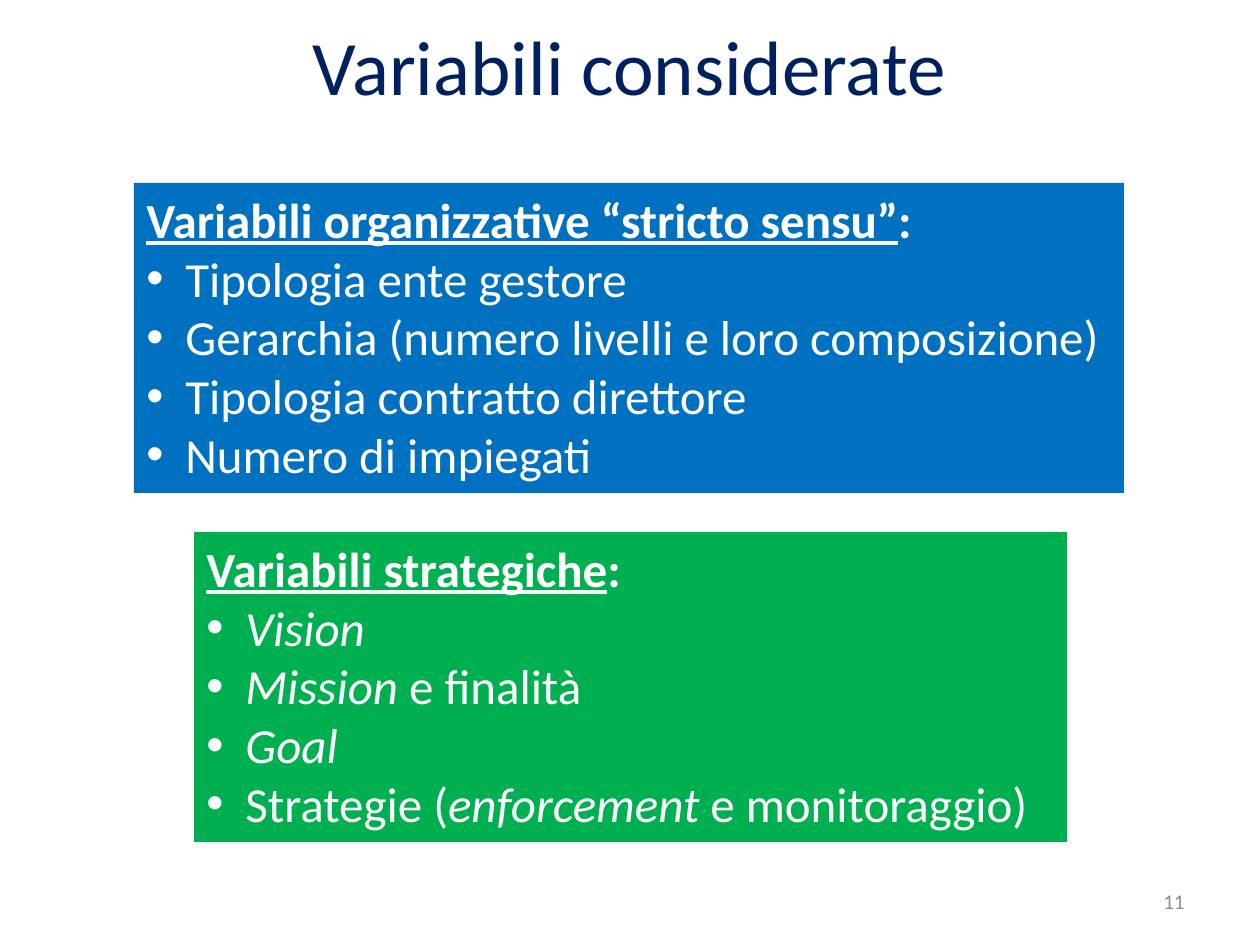
from lxml import etree
from pptx import Presentation, util as u
from pptx.dml.color import RGBColor
from pptx.enum import text
from pptx.oxml.ns import qn

NAVY = RGBColor(0x00, 0x20, 0x60)
BLUE = RGBColor(0x00, 0x70, 0xC0)
GREEN = RGBColor(0x00, 0xB0, 0x50)
WHITE = RGBColor(0xFF, 0xFF, 0xFF)
GREY = RGBColor(0x8C, 0x8C, 0x8C)
PX = u.Inches(1) / 126


def px(length):
    return u.Emu(round(length * PX))


class SlideBuilder:
    font = "Calibri"
    body_size = 28
    bullet_indent = 39

    def __init__(self, slide):
        self.slide = slide

    def style(self, run, size, color):
        run.font.name = self.font
        run.font.size = u.Pt(size)
        run.font.color.rgb = color

    def place(self, shape, box):
        shape.left, shape.top, shape.width, shape.height = map(px, box)

    def single_line(self, shape, wording, size, color, align):
        frame = shape.text_frame
        frame.text = wording
        frame.word_wrap = True
        frame.vertical_anchor = text.MSO_ANCHOR.MIDDLE
        frame.paragraphs[0].alignment = align
        self.style(frame.paragraphs[0].runs[0], size, color)

    def title(self, wording, box):
        title = self.slide.shapes.title
        self.place(title, box)
        self.single_line(title, wording, 44, NAVY, text.PP_ALIGN.CENTER)

    def page_number(self, number, box):
        label = self.slide.shapes.add_textbox(*map(px, box))
        self.single_line(label, number, 12, GREY, text.PP_ALIGN.RIGHT)

    def bullet(self, paragraph):
        properties = paragraph._p.get_or_add_pPr()
        indent = px(self.bullet_indent)
        properties.set("marL", str(indent))
        properties.set("indent", str(-indent))
        etree.SubElement(properties, qn("a:buFont"), typeface="Arial")
        etree.SubElement(properties, qn("a:buChar"), char="•")

    def add_run(self, paragraph, wording):
        run = paragraph.add_run()
        run.text = wording
        self.style(run, self.body_size, WHITE)
        return run

    def panel(self, heading, items, fill, box):
        """Add a filled list; odd pieces of an item split at * are italic."""
        panel = self.slide.shapes.add_textbox(*map(px, box))
        panel.fill.solid()
        panel.fill.fore_color.rgb = fill
        frame = panel.text_frame
        frame.word_wrap = True
        frame.auto_size = text.MSO_AUTO_SIZE.SHAPE_TO_FIT_TEXT
        for wording, underlined in ((heading, True), (":", False)):
            run = self.add_run(frame.paragraphs[0], wording)
            run.font.bold = True
            run.font.underline = underlined
        for item in items:
            paragraph = frame.add_paragraph()
            self.bullet(paragraph)
            for position, piece in enumerate(item.split("*")):
                if piece:
                    self.add_run(paragraph, piece).font.italic = position % 2 == 1


def main():
    deck = Presentation()
    deck.slide_width, deck.slide_height = u.Inches(10), u.Inches(7.5)
    builder = SlideBuilder(deck.slides.add_slide(deck.slide_layouts[5]))

    builder.title("Variabili considerate", (296, -14, 667, 158))
    builder.panel(
        "Variabili organizzative “stricto sensu”",
        ["Tipologia ente gestore",
         "Gerarchia (numero livelli e loro composizione)",
         "Tipologia contratto direttore",
         "Numero di impiegati"],
        BLUE, (134, 183, 990, 310))
    builder.panel(
        "Variabili strategiche",
        ["*Vision*",
         "*Mission* e finalità",
         "*Goal*",
         "Strategie (*enforcement *e monitoraggio)"],
        GREEN, (194, 532, 873, 310))
    builder.page_number("11", (903, 876, 294, 50))

    deck.save("out.pptx")


if __name__ == "__main__":
    main()
